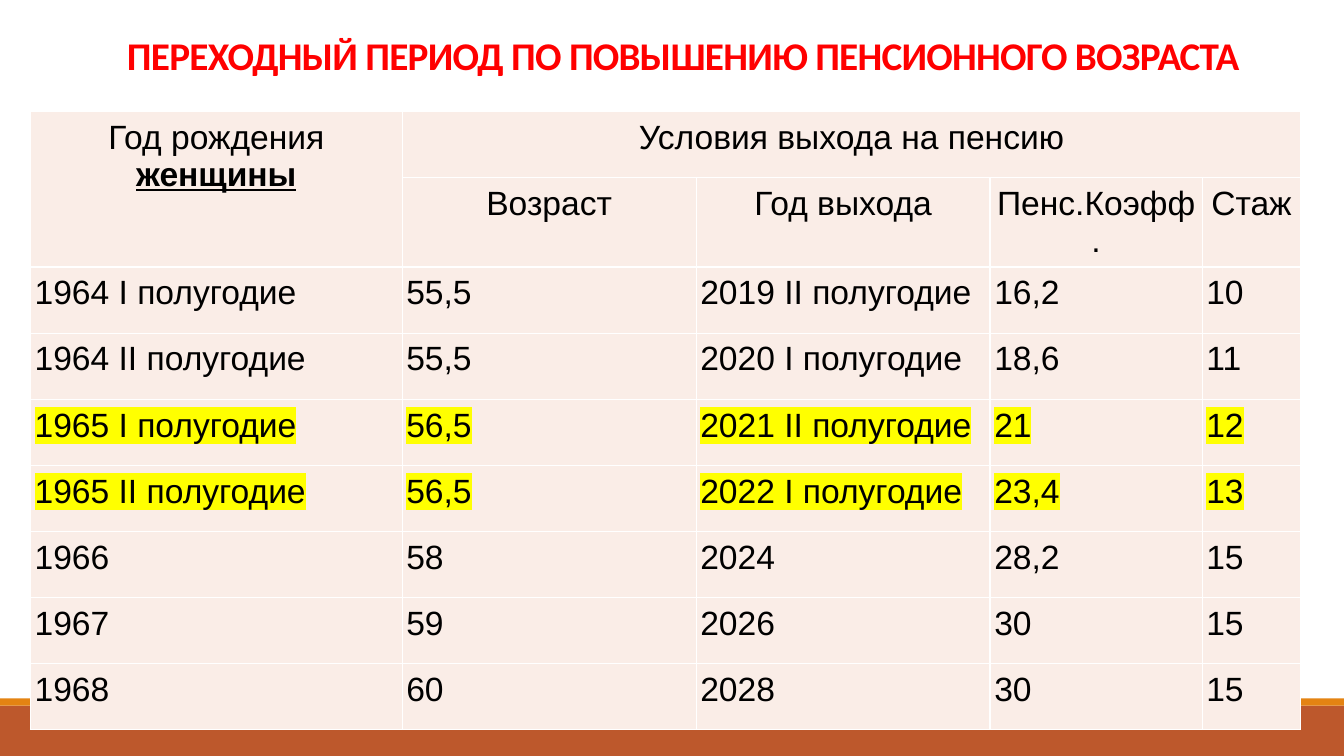
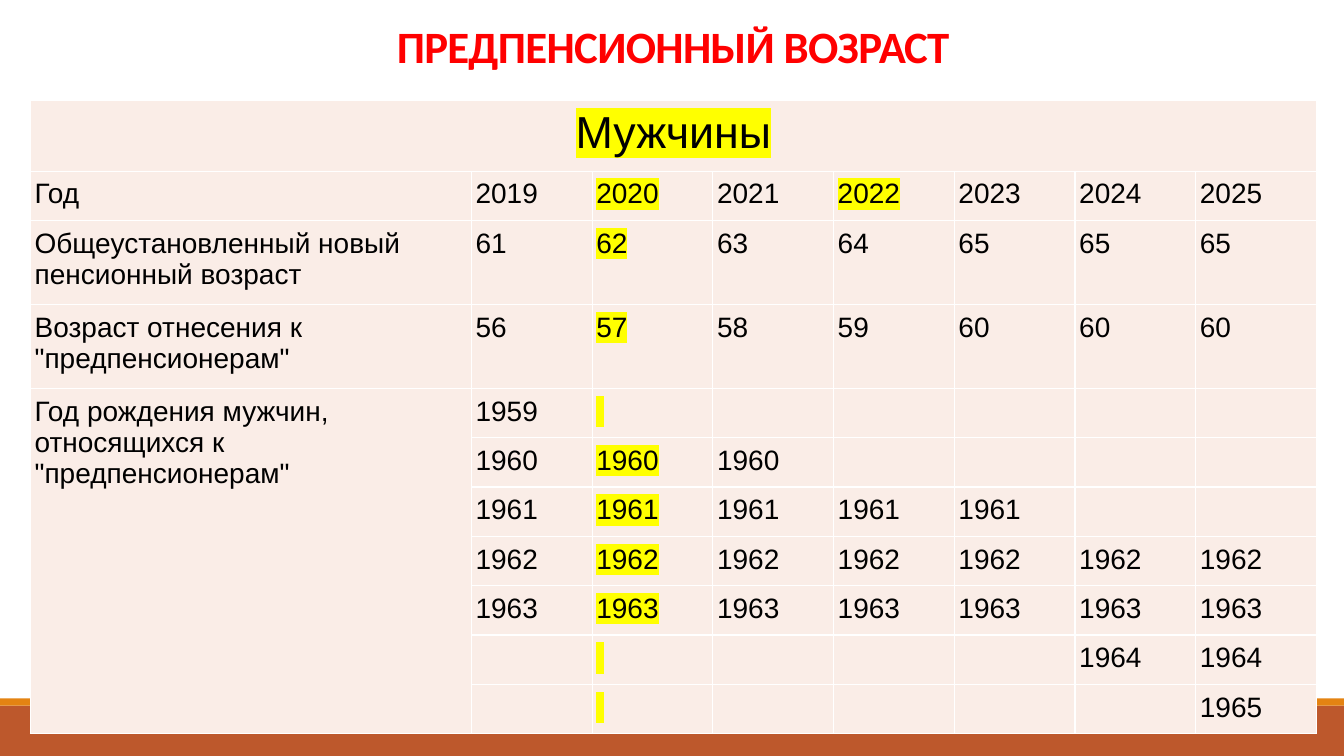
"""Build two slides of pension age tables on a shared title and band style."""
from lxml import etree
from pptx import Presentation
from pptx.dml.color import RGBColor
from pptx.enum.shapes import MSO_SHAPE
from pptx.enum.text import MSO_ANCHOR, MSO_AUTO_SIZE, PP_ALIGN
from pptx.oxml.ns import qn
from pptx.util import Pt

PX = 9525
RECTANGLE = MSO_SHAPE.RECTANGLE
CENTER, LEFT = PP_ALIGN.CENTER, PP_ALIGN.LEFT
BOTTOM, NO_FIT = MSO_ANCHOR.BOTTOM, MSO_AUTO_SIZE.NONE
TITLE_ONLY = 5

WIDTH, HEIGHT = 1280, 720
RED, BLACK, WHITE, YELLOW, CELL = "FF0000", "000000", "FFFFFF", "FFFF00", "FAEDE7"
BANDS = [(672, 48, "BD582C"), (665, 7, "E48312")]
CELL_MARGINS = {"margin_left": 4, "margin_right": 4, "margin_top": 7, "margin_bottom": 7}
BORDER_SIDES = ["a:lnL", "a:lnR", "a:lnT", "a:lnB"]

WOMEN_ROWS = [
    [("Год рождения ", "женщины"), "Условия выхода на пенсию", "", "", ""],
    ["", "Возраст", "Год выхода", "Пенс.Коэфф.", "Стаж"],
    ["1964 I полугодие", "55,5", "2019 II полугодие", "16,2", "10"],
    ["1964 II полугодие", "55,5", "2020 I полугодие", "18,6", "11"],
    ["1965 I полугодие", "56,5", "2021 II полугодие", "21", "12"],
    ["1965 II полугодие", "56,5", "2022 I полугодие", "23,4", "13"],
    ["1966", "58", "2024", "28,2", "15"],
    ["1967", "59", "2026", "30", "15"],
    ["1968", "60", "2028", "30", "15"],
]
MEN_ROWS = [
    ["Мужчины", "", "", "", "", "", "", ""],
    ["Год", "2019", "2020", "2021", "2022", "2023", "2024", "2025"],
    ["Общеустановленный новый пенсионный возраст", "61", "62", "63", "64", "65", "65", "65"],
    ["Возраст отнесения к \"предпенсионерам\"", "56", "57", "58", "59", "60", "60", "60"],
    ["Год рождения мужчин, относящихся к \"предпенсионерам\"", "1959", " ", "", "", "", "", ""],
    ["", "1960", "1960", "1960", "", "", "", ""],
    ["", "1961", "1961", "1961", "1961", "1961", "", ""],
    ["", "1962", "1962", "1962", "1962", "1962", "1962", "1962"],
    ["", "1963", "1963", "1963", "1963", "1963", "1963", "1963"],
    ["", "", " ", "", "", "", "1964", "1964"],
    ["", "", " ", "", "", "", "", "1965"],
]
SLIDES = [
    {
        "title": "ПЕРЕХОДНЫЙ ПЕРИОД ПО ПОВЫШЕНИЮ ПЕНСИОННОГО ВОЗРАСТА",
        "title_box": (47, 28, 1207, 52), "title_size": 28,
        "rows": WOMEN_ROWS, "table_at": (29, 106),
        "columns": [354, 280, 280, 202, 94], "heights": [63] * 9,
        "merges": [(0, 0, 1, 0), (0, 1, 0, 4)],
        "header_rows": 2, "header_size": 24, "body_size": 24,
        "highlights": {(row, column) for row in (4, 5) for column in range(5)},
    },
    {
        "title": "ПРЕДПЕНСИОННЫЙ ВОЗРАСТ",
        "title_box": (89, 16, 1104, 58), "title_size": 32,
        "rows": MEN_ROWS, "table_at": (29, 96),
        "columns": [420] + [115] * 7, "heights": [67, 47, 80, 80] + [47] * 7,
        "merges": [(0, 0, 0, 7), (4, 0, 10, 0)],
        "header_rows": 1, "header_size": 32, "body_size": 20,
        "highlights": {(0, 0), (1, 4)} | {(row, 2) for row in range(1, 11)},
    },
]


def color(value):
    return RGBColor.from_string(value)


def scaled(*lengths):
    return [length * PX for length in lengths]


def set_attributes(target, values):
    for name, value in values.items():
        setattr(target, name, value)


def add_color(parent, tag, value):
    element = etree.SubElement(parent, qn(tag))
    etree.SubElement(element, qn("a:srgbClr"), val=value)


def add_run(paragraph, text, font_values, font_color, highlight=False):
    run = paragraph.add_run()
    run.text = text
    run.font.color.rgb = color(font_color)
    if highlight:
        add_color(run.font.fill._xPr, "a:highlight", YELLOW)
    set_attributes(run.font, font_values)
    return run


def add_bands(slide):
    layout_tree = slide.slide_layout.shapes.element
    for top, height, fill in BANDS:
        band = slide.shapes.add_shape(RECTANGLE, *scaled(0, top, WIDTH, height))
        band.shadow.inherit = False
        band.fill.solid()
        band.fill.fore_color.rgb = color(fill)
        band.line.fill.background()
        layout_tree.append(band.element)


def write_title(title, content):
    sides = ("left", "top", "width", "height")
    set_attributes(title, dict(zip(sides, scaled(*content["title_box"]))))
    set_attributes(title.text_frame, {
        "auto_size": NO_FIT, "word_wrap": True, "vertical_anchor": BOTTOM})
    paragraph = title.text_frame.paragraphs[0]
    set_attributes(paragraph, {"alignment": CENTER, "line_spacing": 0.85})
    font_values = {"name": "Calibri", "size": Pt(content["title_size"]), "bold": True}
    run = add_run(paragraph, content["title"], font_values, RED)
    run.font._element.set("spc", "-50")


def format_cell(cell):
    set_attributes(cell, {name: margin * PX for name, margin in CELL_MARGINS.items()})
    properties = cell._tc.get_or_add_tcPr()
    for side in BORDER_SIDES:
        border = etree.SubElement(properties, qn(side), w=str(Pt(1)))
        add_color(border, "a:solidFill", WHITE)
    cell.fill.solid()
    cell.fill.fore_color.rgb = color(CELL)


def write_cell(cell, content, size, alignment, highlight):
    paragraph = cell.text_frame.paragraphs[0]
    paragraph.alignment = alignment
    paragraph.font.size = Pt(size)
    texts = content if isinstance(content, tuple) else (content,)
    for index, text in enumerate(texts):
        if text:
            emphasis = index > 0
            font_values = {"name": "Arial", "size": Pt(size),
                           "bold": emphasis, "underline": emphasis}
            add_run(paragraph, text, font_values, BLACK, highlight)


def add_pension_table(slide, content):
    rows, columns, heights = content["rows"], content["columns"], content["heights"]
    box = scaled(*content["table_at"], sum(columns), sum(heights))
    table = slide.shapes.add_table(len(rows), len(columns), *box).table
    set_attributes(table, {"first_row": False, "horz_banding": False})
    for column, width in zip(table.columns, columns):
        column.width = width * PX
    for row, height in zip(table.rows, heights):
        row.height = height * PX
    for row_index, row in enumerate(rows):
        is_header = row_index < content["header_rows"]
        size = content["header_size" if is_header else "body_size"]
        alignment = CENTER if is_header else LEFT
        for column_index, text in enumerate(row):
            cell = table.cell(row_index, column_index)
            format_cell(cell)
            highlight = (row_index, column_index) in content["highlights"]
            write_cell(cell, text, size, alignment, highlight)
    for top, left, bottom, right in content["merges"]:
        table.cell(top, left).merge(table.cell(bottom, right))


def main():
    presentation = Presentation()
    presentation.slide_width, presentation.slide_height = scaled(WIDTH, HEIGHT)
    layout = presentation.slide_layouts[TITLE_ONLY]
    for index, content in enumerate(SLIDES):
        slide = presentation.slides.add_slide(layout)
        if index == 0:
            add_bands(slide)
        write_title(slide.shapes.title, content)
        add_pension_table(slide, content)
    presentation.save("out.pptx")


if __name__ == "__main__":
    main()
